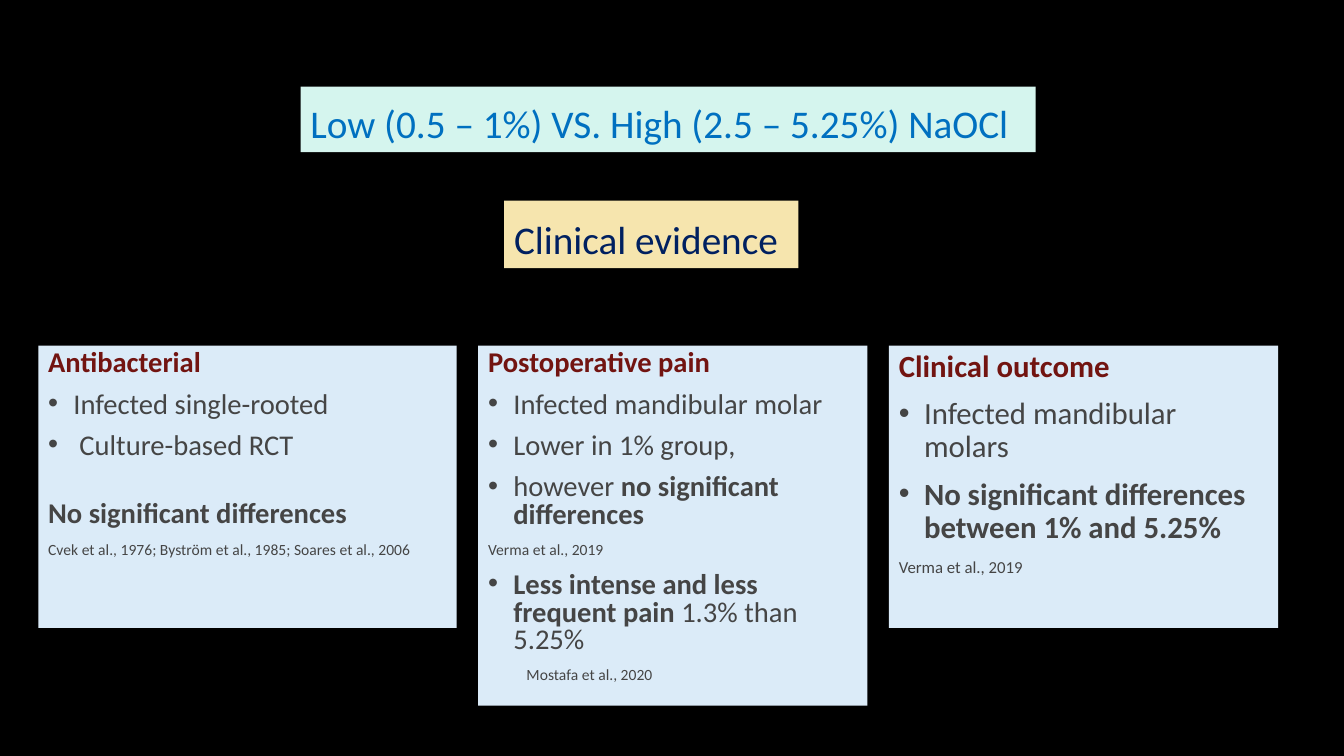
"""Build a slide that sets out clinical evidence on low and high NaOCl."""
from dataclasses import dataclass

from lxml import etree
from pptx import Presentation
from pptx import util as u
from pptx.dml.color import RGBColor
from pptx.enum import shapes, text
from pptx.oxml import ns

WIDTH, HEIGHT = u.Inches(13.33), u.Inches(7.5)
COL, ROW = WIDTH / 100, HEIGHT / 100
FONT = "Calibri"
HUES = {
    "back": "000000", "mint": "D5F5EE", "sand": "F6E5AE", "ice": "DBEBF8",
    "blue": "0070C0", "navy": "002060", "wine": "721411", "gray": "454545",
}


@dataclass(frozen=True)
class Line:
    """One paragraph: spans of (words, bold), with its size and layout."""
    spans: tuple[tuple[str, bool], ...]
    size: float
    hue: str = "gray"
    bullet: bool = False
    indent: float = 0
    before: float = 10


@dataclass(frozen=True)
class Box:
    """One filled box, placed in columns and rows of the grid."""
    left: float
    top: float
    width: float
    height: float
    fill: str
    lines: tuple[Line, ...]
    spacing: float = 0.9
    anchor: text.MSO_ANCHOR = text.MSO_ANCHOR.TOP


@dataclass(frozen=True)
class Panel:
    """One column of findings, with its width and height on the grid."""
    width: float
    height: float
    spacing: float
    lines: tuple[Line, ...]


def head(words: str, size: float) -> Line:
    """Return a panel heading."""
    return Line(((words, True),), size, "wine")


def point(size: float, *spans: tuple[str, bool], indent: float = 0.25) -> Line:
    """Return a bullet point."""
    return Line(spans, size, bullet=True, indent=indent)


def cite(words: str, size: float, indent: float = 0) -> Line:
    """Return a small citation."""
    return Line(((words, False),), size, indent=indent)


def title(left: float, top: float, width: float, height: float,
          fill: str, words: str, hue: str) -> Box:
    """Return a one-line title box."""
    return Box(left, top, width, height, fill,
               (Line(((words, False),), 28, hue),), anchor=text.MSO_ANCHOR.BOTTOM)


BODY, NOTE = 20.4, 11.1
WIDE, SMALL = 22, 12
EDGE, GAP, TOP = 2.85, 1.6, 45.73

TITLES = (
    title(22.36, 11.47, 54.69, 8.67, "mint",
          "Low (0.5 – 1%) VS. High (2.5 – 5.25%) NaOCl", "blue"),
    title(37.51, 26.53, 21.9, 8.93, "sand", "Clinical evidence", "navy"),
)
PANELS = (
    Panel(31.13, 37.33, 0.8, (
        head("Antibacterial", BODY),
        point(BODY, ("Infected single-rooted", False)),
        point(BODY, ("Culture-based RCT", False), indent=0.31),
        Line((("No significant differences", True),), BODY, before=29.3),
        cite("Cvek et al., 1976; Byström et al., 1985; Soares et al., 2006", NOTE),
    )),
    Panel(28.96, 47.6, 0.8, (
        head("Postoperative pain", BODY),
        point(BODY, ("Infected mandibular molar", False)),
        point(BODY, ("Lower in 1% group,", False)),
        point(BODY, ("however", False), (" no significant differences", True)),
        cite("Verma et al., 2019", NOTE),
        point(BODY, ("Less intense and less frequent pain ", True),
              ("1.3% than 5.25%", False)),
        cite("Mostafa et al., 2020", NOTE, indent=0.38),
    )),
    Panel(28.96, 37.33, 0.9, (
        head("Clinical outcome", WIDE),
        point(WIDE, ("Infected mandibular molars", False)),
        point(WIDE, ("No significant differences between 1% and 5.25%", True)),
        cite("Verma et al., 2019", SMALL),
    )),
)


def tint(name: str) -> RGBColor:
    """Return the named colour."""
    return RGBColor.from_string(HUES[name])


def write(para, line: Line, spacing: float, first: bool) -> None:
    """Fill and format one paragraph."""
    para.alignment = text.PP_ALIGN.LEFT
    para.line_spacing = spacing
    para.space_before = u.Pt(0 if first else line.before)
    props = para._p.get_or_add_pPr()
    props.set("marL", str(u.Inches(line.indent)))
    props.set("indent", str(-u.Inches(line.indent) if line.bullet else 0))
    if line.bullet:
        face = etree.SubElement(props, ns.qn("a:buFont"))
        face.set("typeface", "Arial")
        mark = etree.SubElement(props, ns.qn("a:buChar"))
        mark.set("char", "•")
    else:
        etree.SubElement(props, ns.qn("a:buNone"))
    para.text = line.spans[0][0]
    for words, _ in line.spans[1:]:
        para.add_run().text = words
    for run, (_, bold) in zip(para.runs, line.spans):
        run.font.name = FONT
        run.font.size = u.Pt(line.size)
        run.font.bold = bold
        run.font.color.rgb = tint(line.hue)


def draw(slide, box: Box) -> None:
    """Draw one box with its text."""
    shape = slide.shapes.add_shape(
        shapes.MSO_SHAPE.RECTANGLE, round(box.left * COL), round(box.top * ROW),
        round(box.width * COL), round(box.height * ROW))
    shape.shadow.inherit = False
    shape.fill.solid()
    shape.fill.fore_color.rgb = tint(box.fill)
    shape.line.fill.background()
    frame = shape.text_frame
    frame.word_wrap = True
    frame.vertical_anchor = box.anchor
    for rank, line in enumerate(box.lines):
        para = frame.add_paragraph() if rank else frame.paragraphs[0]
        write(para, line, box.spacing, rank == 0)


def main() -> None:
    """Build and save the slide."""
    deck = Presentation()
    deck.slide_width, deck.slide_height = WIDTH, HEIGHT
    slide = deck.slides.add_slide(deck.slide_layouts[6])
    slide.background.fill.solid()
    slide.background.fill.fore_color.rgb = tint("back")
    for box in TITLES:
        draw(slide, box)
    left = EDGE
    for panel in PANELS:
        draw(slide, Box(left, TOP, panel.width, panel.height, "ice",
                        panel.lines, panel.spacing))
        left += panel.width + GAP
    deck.save("out.pptx")


if __name__ == "__main__":
    main()
